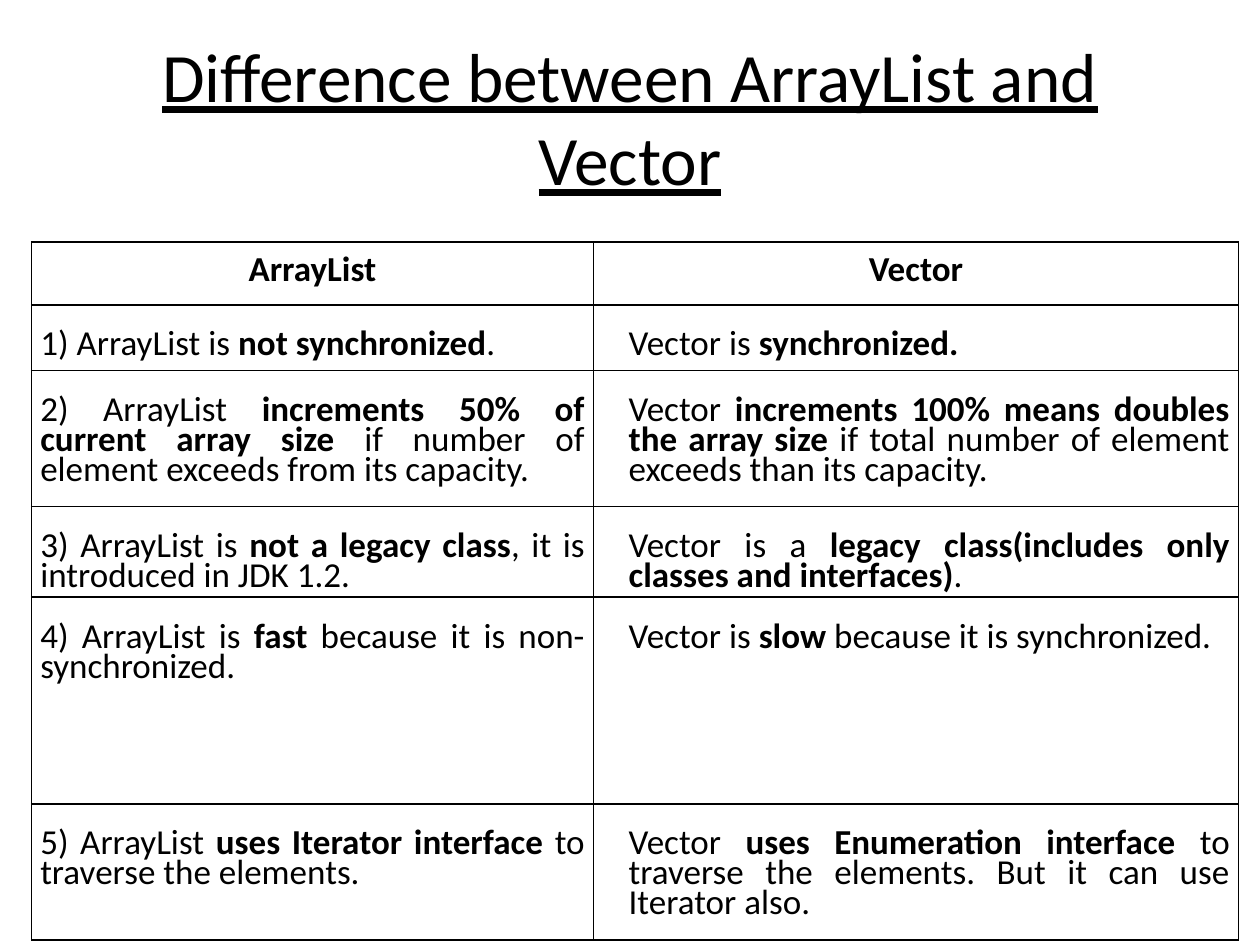
import pptx
import pptx.dml.color
import pptx.enum.text
import pptx.oxml
import pptx.oxml.ns
import pptx.util
from pptx.util import Inches

COLORS = {"text": "000000", "border": "000000", "background": "FFFFFF"}
FONT = "Calibri"
COLUMN_WIDTHS = (4.46, 5.12)
ROW_HEIGHTS = (0.5, 0.52, 1.08, 0.72, 1.64, 1.08)
HEADINGS = ("ArrayList", "Vector")
COMPARISONS = (
    (("1) ArrayList is ", "not synchronized", "."),
     ("Vector is ", "synchronized.")),
    (("2) ArrayList ", "increments 50% of current array size ",
      "if number of element exceeds from its capacity."),
     ("Vector", " increments 100% means doubles the array size",
      " if total number of element exceeds than its capacity.")),
    (("3) ArrayList is ", "not a legacy class", ", it is introduced in JDK 1.2."),
     ("Vector is a ", "legacy class(includes only classes and interfaces)", ".")),
    (("4) ArrayList is", " fast", " because it is non-synchronized."),
     ("Vector is", " slow", " because it is synchronized.")),
    (("5) ArrayList ", "uses Iterator interface ", "to traverse the elements."),
     ("Vector ", "uses Enumeration interface ",
      "to traverse the elements. But it can use Iterator also.")),
)


def rgb(name):
    """Return the named colour."""
    return pptx.dml.color.RGBColor.from_string(COLORS[name])


def add_run(paragraph, text, size, bold=False, underline=False):
    """Append one formatted run to a paragraph."""
    run = paragraph.add_run()
    run.text = text
    run.font.name = FONT
    run.font.size = pptx.util.Pt(size)
    run.font.bold = bold
    run.font.underline = underline
    run.font.color.rgb = rgb("text")


def add_title(slide, text):
    """Place the underlined heading in the title placeholder."""
    title = slide.shapes.title
    title.left, title.top = Inches(0.5), Inches(0.3)
    title.width, title.height = Inches(9), Inches(1.25)
    title.text_frame.vertical_anchor = pptx.enum.text.MSO_ANCHOR.MIDDLE
    heading = title.text_frame.paragraphs[0]
    heading.alignment = pptx.enum.text.PP_ALIGN.CENTER
    add_run(heading, text, 39.6, underline=True)


def format_cell(cell):
    """Give a cell its margins, thin borders and no fill."""
    cell.margin_left = cell.margin_right = Inches(0.07)
    cell.margin_top = cell.margin_bottom = 0
    properties = cell._tc.get_or_add_tcPr()
    for side in ("lnL", "lnR", "lnT", "lnB"):
        properties.append(pptx.oxml.parse_xml(
            f'<a:{side} {pptx.oxml.ns.nsdecls("a")} w="12700"><a:solidFill>'
            f'<a:srgbClr val="{COLORS["border"]}"/></a:solidFill></a:{side}>'))
    cell.fill.background()


def fill_heading(cell, text):
    """Write a bold centred column heading."""
    format_cell(cell)
    heading = cell.text_frame.paragraphs[0]
    heading.alignment = pptx.enum.text.PP_ALIGN.CENTER
    heading.line_spacing = 1.15
    add_run(heading, text, 20, bold=True)


def fill_comparison(cell, phrases, indent):
    """Write justified phrases, every second one in bold."""
    format_cell(cell)
    cell.margin_top = Inches(0.24)
    statement = cell.text_frame.paragraphs[0]
    statement.alignment = pptx.enum.text.PP_ALIGN.JUSTIFY
    statement.line_spacing = pptx.util.Pt(17.2)
    statement._p.get_or_add_pPr().set("marL", str(Inches(indent)))
    for position, phrase in enumerate(phrases):
        add_run(statement, phrase, 20, bold=position % 2 == 1)


def add_comparison_table(slide):
    """Build the table that sets the two classes side by side."""
    table = slide.shapes.add_table(
        len(ROW_HEIGHTS), len(COLUMN_WIDTHS), Inches(0.25), Inches(1.92),
        Inches(sum(COLUMN_WIDTHS)), Inches(sum(ROW_HEIGHTS))).table
    table.first_row = table.horz_banding = False
    for column, width in zip(table.columns, COLUMN_WIDTHS):
        column.width = Inches(width)
    for row, height in zip(table.rows, ROW_HEIGHTS):
        row.height = Inches(height)
    for column, heading in enumerate(HEADINGS):
        fill_heading(table.cell(0, column), heading)
    for row, statements in enumerate(COMPARISONS, start=1):
        for column, phrases in enumerate(statements):
            fill_comparison(table.cell(row, column), phrases, 0.21 * column)


def main():
    """Build and save the slide."""
    presentation = pptx.Presentation()
    presentation.slide_width, presentation.slide_height = Inches(10), Inches(7.5)
    slide = presentation.slides.add_slide(presentation.slide_layouts[5])
    slide.background.fill.solid()
    slide.background.fill.fore_color.rgb = rgb("background")
    add_title(slide, "Difference between ArrayList and Vector")
    add_comparison_table(slide)
    presentation.save("out.pptx")


if __name__ == "__main__":
    main()
